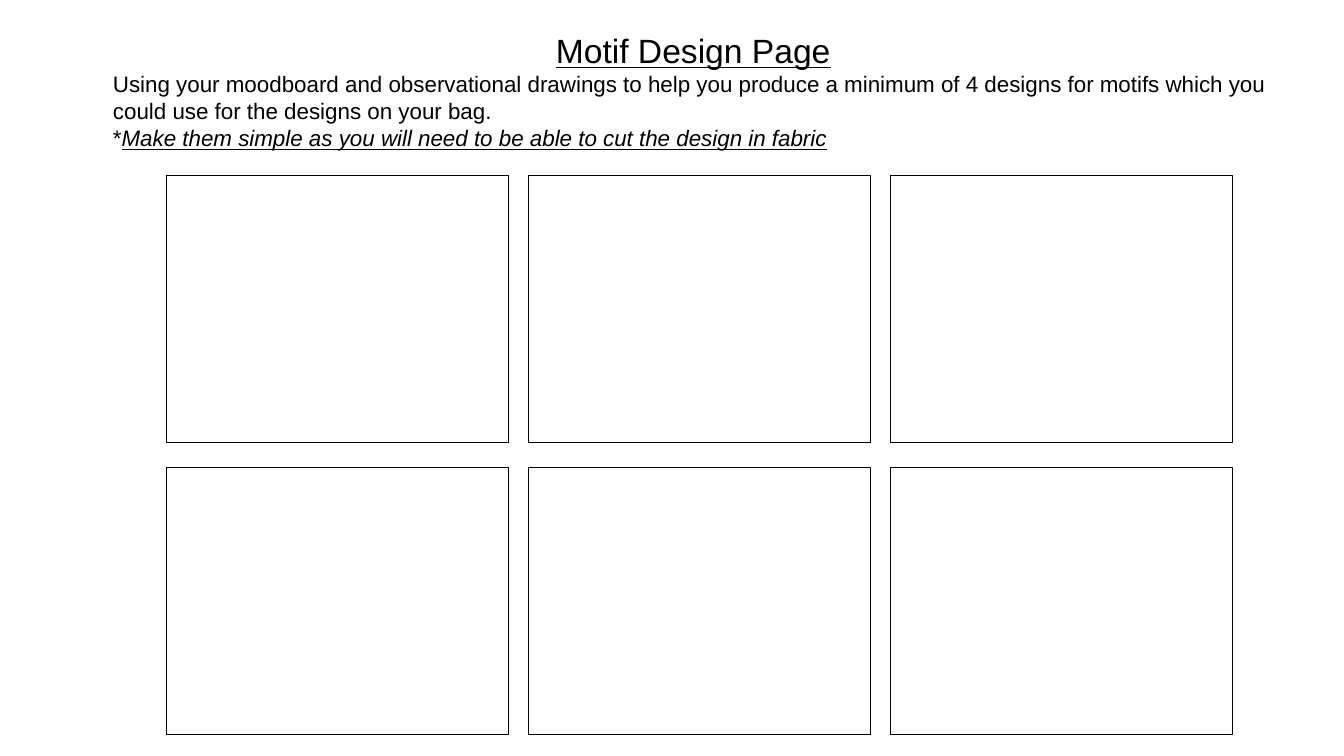
from dataclasses import dataclass, field
from itertools import product

from pptx import Presentation
from pptx.dml.color import RGBColor
from pptx.enum.shapes import MSO_SHAPE
from pptx.enum.text import PP_ALIGN
from pptx.slide import Slide
from pptx.util import Emu, Pt

SCALE = 9144


@dataclass(frozen=True)
class Theme:
    font: str = "Arial"
    ink: RGBColor = RGBColor(0, 0, 0)
    title: Pt = Pt(24)
    body: Pt = Pt(16)
    line: Pt = Pt(0.75)


@dataclass(frozen=True)
class Box:
    left: int
    top: int
    width: int
    height: int

    def emu(self) -> list[Emu]:
        return [px(n) for n in (self.left, self.top, self.width, self.height)]


@dataclass(frozen=True)
class Span:
    text: str
    style: dict = field(default_factory=dict)


@dataclass(frozen=True)
class Para:
    spans: list[Span]
    size: Pt
    align: PP_ALIGN = PP_ALIGN.LEFT


THEME = Theme()
INTRO = Box(108, 26, 1159, 127)
PARAS = [
    Para([Span("Motif Design Page", {"underline": True})], THEME.title, PP_ALIGN.CENTER),
    Para([Span("Using your moodboard and observational drawings to help you produce "
               "a minimum of 4 designs for motifs which you could use for the "
               "designs on your bag.")], THEME.body),
    Para([Span("*"),
          Span("Make them simple as you will need to be able to cut the design in fabric",
               {"italic": True, "underline": True})], THEME.body),
]
FRAMES = [Box(165 + 359 * col, 174 + 290 * row, 339, 265)
          for row, col in product(range(2), range(3))]


def px(count: int) -> Emu:
    return Emu(count * SCALE)


def apply(target: object, style: dict) -> None:
    for key, value in style.items():
        setattr(target, key, value)


def add_text(slide: Slide, box: Box, paras: list[Para]) -> None:
    frame = slide.shapes.add_textbox(*box.emu()).text_frame
    sides = ("left", "top", "right", "bottom")
    apply(frame, {"word_wrap": True} | {f"margin_{side}": px(4) for side in sides})
    for index, para in enumerate(paras):
        line = frame.add_paragraph() if index else frame.paragraphs[0]
        line.alignment = para.align
        for span in para.spans:
            run = line.add_run()
            run.text = span.text
            apply(run.font, {"name": THEME.font, "size": para.size} | span.style)
            run.font.color.rgb = THEME.ink


def add_frame(slide: Slide, box: Box) -> None:
    shape = slide.shapes.add_shape(MSO_SHAPE.RECTANGLE, *box.emu())
    shape.shadow.inherit = False
    shape.fill.background()
    shape.line.color.rgb = THEME.ink
    shape.line.width = THEME.line


def main() -> None:
    deck = Presentation()
    apply(deck, {"slide_width": px(1333), "slide_height": px(750)})
    slide = deck.slides.add_slide(deck.slide_layouts[6])
    add_text(slide, INTRO, PARAS)
    for box in FRAMES:
        add_frame(slide, box)
    deck.save("out.pptx")


if __name__ == "__main__":
    main()
